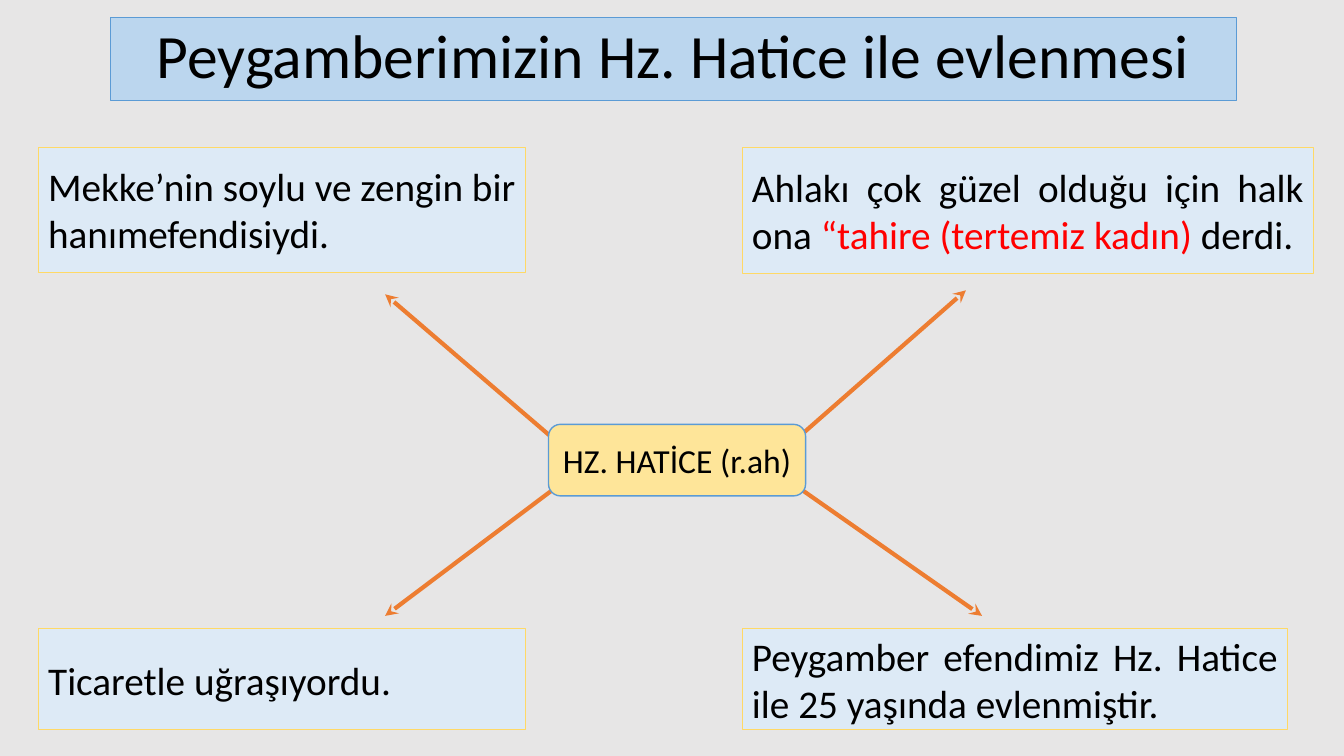
import pptx
import pptx.util
import pptx.dml.color
import pptx.enum.shapes
import pptx.enum.text
import pptx.oxml
import pptx.oxml.ns
from pptx.util import Inches

# Content
TITLE = "Peygamberimizin Hz. Hatice ile evlenmesi"
CENTER = "HZ. HATİCE (r.ah)"
# Each fact: column, row, width, height, arrow start, arrow tip, (text, colour) runs
FACTS = [
    ("left", "top", 4.83, 1.24, (5.8, 4.62), (3.82, 2.92),
     [("Mekke’nin soylu ve zengin bir hanımefendisiydi.", "text")]),
    ("right", "top", 5.67, 1.25, (7.61, 4.61), (9.58, 2.88),
     [("Ahlakı çok güzel olduğu için halk ona ", "text"),
      ("“tahire (tertemiz kadın) ", "accent"),
      ("derdi.", "text")]),
    ("left", "bottom", 4.83, 1, (5.8, 4.62), (3.82, 6.11),
     [("Ticaretle uğraşıyordu.", "text")]),
    ("right", "bottom", 5.41, 1, (7.61, 4.62), (9.74, 6.11),
     [("Peygamber efendimiz Hz. Hatice ile 25 yaşında evlenmiştir.", "text")]),
]
COLUMNS = {"left": 0.38, "right": 7.36}
ROWS = {"top": 1.46, "bottom": 6.24}

THEME = {
    "font": "Calibri",
    "size": {"title": 44, "fact": 28, "center": 24},
    "color": {
        "background": "E7E6E6", "text": "000000", "accent": "FF0000",
        "title": "BBD6EE", "fact": "DDEAF6", "center": "FEE599",
        "blue line": "5B9BD5", "fact line": "FFD966", "arrow": "ED7D31",
    },
}
SHAPES = pptx.enum.shapes.MSO_SHAPE
ALIGN = pptx.enum.text.PP_ALIGN


def color(name):
    return pptx.dml.color.RGBColor.from_string(THEME["color"][name])


def add_box(slide, place, role, runs, line, line_width=0.75,
            align=ALIGN.CENTER, outline=SHAPES.RECTANGLE):
    box = slide.shapes.add_shape(outline, *map(Inches, place))
    box.shadow.inherit = False
    box.fill.solid()
    box.fill.fore_color.rgb = color(role)
    box.line.color.rgb = color(line)
    box.line.width = pptx.util.Pt(line_width)
    frame = box.text_frame
    frame.word_wrap = True
    frame.vertical_anchor = pptx.enum.text.MSO_ANCHOR.MIDDLE
    paragraph = frame.paragraphs[0]
    paragraph.alignment = align
    for text, tint in runs:
        run = paragraph.add_run()
        run.text = text
        run.font.name = THEME["font"]
        run.font.size = pptx.util.Pt(THEME["size"][role])
        run.font.color.rgb = color(tint)
    return box


def add_arrow(slide, start, tip):
    arrow = slide.shapes.add_connector(
        pptx.enum.shapes.MSO_CONNECTOR.STRAIGHT, *map(Inches, start + tip))
    arrow.line.color.rgb = color("arrow")
    arrow.line.width = pptx.util.Pt(3)
    qn = pptx.oxml.ns.qn
    properties = arrow._element.spPr
    head = properties.find(qn("a:ln")).makeelement(qn("a:tailEnd"), {"type": "stealth"})
    properties.find(qn("a:ln")).append(head)
    properties.append(properties.makeelement(qn("a:effectLst"), {}))


def main():
    deck = pptx.Presentation()
    deck.slide_width, deck.slide_height = Inches(13.33), Inches(7.5)
    slide = deck.slides.add_slide(deck.slide_layouts[6])
    slide.background.fill.solid()
    slide.background.fill.fore_color.rgb = color("background")

    # Title
    title = add_box(slide, (1.1, 0.17, 11.16, 0.83), "title",
                    [(TITLE, "text")], "blue line")
    title.text_frame.paragraphs[0].line_spacing = 0.9

    # Facts and the arrows that lead to them
    for column, row, width, height, start, tip, runs in FACTS:
        add_box(slide, (COLUMNS[column], ROWS[row], width, height), "fact",
                runs, "fact line", align=ALIGN.JUSTIFY)
        add_arrow(slide, start, tip)

    # Center, in front of the arrow starts
    add_box(slide, (5.44, 4.21, 2.55, 0.71), "center", [(CENTER, "text")],
            "blue line", line_width=1, outline=SHAPES.ROUNDED_RECTANGLE)

    deck.save("out.pptx")


if __name__ == "__main__":
    main()
